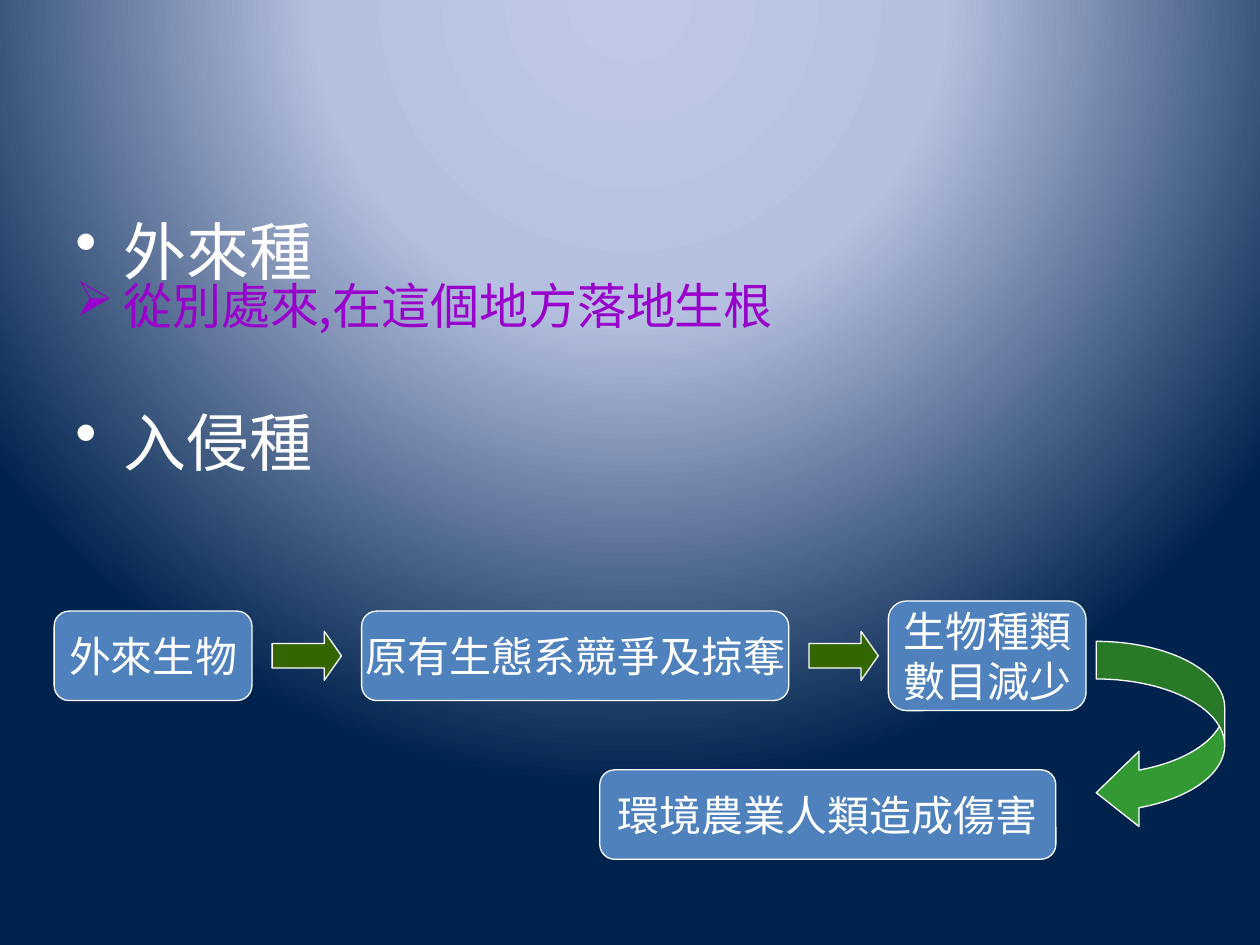
from lxml import etree
from pptx import Presentation
from pptx.dml import color
from pptx.enum import shapes, text
from pptx.oxml import ns, parse_xml
from pptx.util import Inches, Pt

WHITE, BLUE, PURPLE = "FFFFFF", "4F81BD", "9900CC"
DARK_GREEN, GREEN = "336600", "339933"
CJK_FONT = "Noto Sans CJK JP"
SHAPE = shapes.MSO_SHAPE


def rgb(value):
    return color.RGBColor.from_string(value)


def add_span(para, words, size, font, ink):
    span = para.add_run()
    span.text = words
    span.font.size = Pt(size)
    span.font.name = font
    span.font.color.rgb = rgb(ink)
    return span


def add_background(page):
    stops = [(0, "BFC9E5"), (40, "B5C0E0"), (100, "00234D")]
    stop_xml = "".join(
        f'<a:gs pos="{pos * 1000}"><a:srgbClr val="{value}"/></a:gs>'
        for pos, value in stops)
    page.element.cSld.insert(0, parse_xml(
        f'<p:bg {ns.nsdecls("p", "a")}><p:bgPr><a:gradFill rotWithShape="1">'
        f'<a:gsLst>{stop_xml}</a:gsLst><a:path path="circle">'
        '<a:fillToRect l="50000" t="-80000" r="50000" b="180000"/></a:path>'
        '</a:gradFill><a:effectLst/></p:bgPr></p:bg>'))


def add_definitions(page, left, top, width, height):
    box = page.shapes.add_textbox(
        Inches(left), Inches(top), Inches(width), Inches(height))
    frame = box.text_frame
    frame.word_wrap = True
    # Bullet, words, size, colour, space before
    items = [("•", "外來種", 36, WHITE, 0),
             ("➢", "從別處來,在這個地方落地生根", 28, PURPLE, 0),
             ("•", "入侵種", 36, WHITE, 48)]
    for index, (bullet, words, size, ink, gap) in enumerate(items):
        para = frame.add_paragraph() if index else frame.paragraphs[0]
        para.line_spacing = 0.8
        para.space_before = Pt(gap)
        props = para._p.get_or_add_pPr()
        props.set("marL", str(Inches(0.38)))
        props.set("indent", str(-Inches(0.38)))
        etree.SubElement(props, ns.qn("a:buChar")).set("char", bullet)
        span = add_span(para, words, size, CJK_FONT, ink)
        east_asian = etree.SubElement(span.font._element, ns.qn("a:ea"))
        east_asian.set("typeface", CJK_FONT)


def add_block(page, kind, left, top, width, height, fill, adjustments):
    block = page.shapes.add_shape(
        kind, Inches(left), Inches(top), Inches(width), Inches(height))
    block.shadow.inherit = False
    block.fill.solid()
    block.fill.fore_color.rgb = rgb(fill)
    block.line.color.rgb = rgb(WHITE)
    block.line.width = Pt(0.75)
    for index, value in enumerate(adjustments):
        block.adjustments[index] = value
    return block


def add_step(page, left, top, width, height, lines):
    step = add_block(page, SHAPE.ROUNDED_RECTANGLE,
                     left, top, width, height, BLUE, [0.167])
    frame = step.text_frame
    frame.word_wrap = False
    frame.vertical_anchor = text.MSO_ANCHOR.MIDDLE
    for index, words in enumerate(lines):
        para = frame.add_paragraph() if index else frame.paragraphs[0]
        para.alignment = text.PP_ALIGN.CENTER
        add_span(para, words, 24, "Calibri", WHITE)


def add_flow(page, left, top):
    # Steps, all relative to the corner of the flow
    steps = [(0, 0.08, 1.57, 0.71, ["外來生物"]),
             (2.44, 0.08, 3.39, 0.71, ["原有生態系競爭及掠奪"]),
             (6.62, 0, 1.57, 0.87, ["生物種類", "數目減少"]),
             (4.33, 1.34, 3.62, 0.71, ["環境農業人類造成傷害"])]
    for x, y, width, height, lines in steps:
        add_step(page, left + x, top + y, width, height, lines)

    # Arrows between the steps of the upper row
    for x in (1.73, 5.99):
        add_block(page, SHAPE.RIGHT_ARROW, left + x, top + 0.24,
                  0.55, 0.39, DARK_GREEN, [0.5, 0.35])

    # Turn down to the last step
    add_block(page, SHAPE.CURVED_LEFT_ARROW, left + 8.27, top + 0.32,
              1.02, 1.5, GREEN, [0.293, 0.585, 0.333])


def main():
    deck = Presentation()
    deck.slide_width, deck.slide_height = Inches(10), Inches(7.5)
    page = deck.slides.add_slide(deck.slide_layouts[6])
    add_background(page)
    add_definitions(page, 0.5, 1.75, 9, 4.95)
    add_flow(page, 0.43, 4.77)
    deck.save("out.pptx")


if __name__ == "__main__":
    main()
